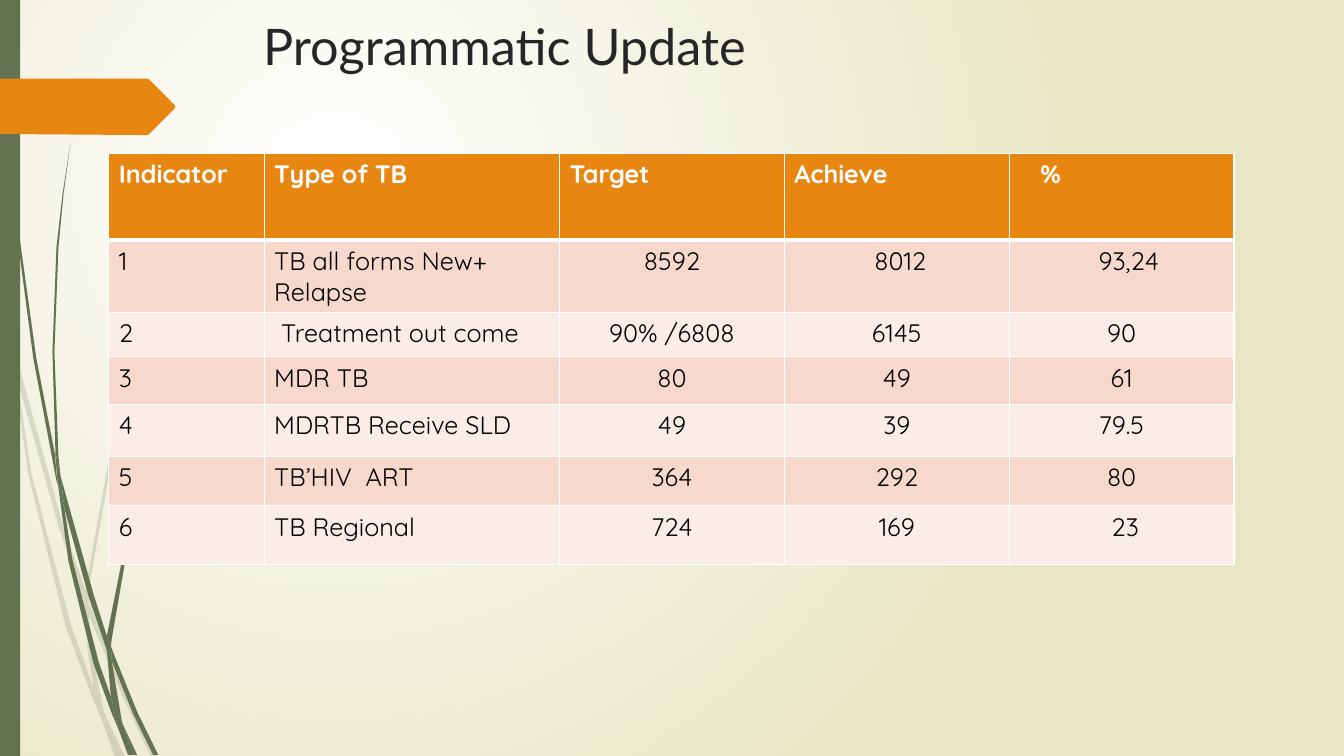
from dataclasses import dataclass

from lxml import etree
from pptx import Presentation
from pptx.dml.color import RGBColor
from pptx.enum.shapes import MSO_SHAPE
from pptx.enum.text import MSO_ANCHOR, PP_ALIGN
from pptx.oxml.ns import qn
from pptx.util import Inches, Pt

RECTANGLE = MSO_SHAPE.RECTANGLE
TOP = MSO_ANCHOR.TOP
LEFT, CENTER = PP_ALIGN.LEFT, PP_ALIGN.CENTER


@dataclass(frozen=True)
class Theme:
    white: str = "FFFFFF"
    black: str = "000000"
    title: str = "262626"
    sand: str = "E8E6C4"
    green: str = "647252"
    orange: str = "E78712"
    bands: tuple = ("F6D9CC", "FAEDE7")
    title_font: str = "Lato"
    body_font: str = "Quicksand"
    title_size: int = 36
    body_size: int = 18


THEME = Theme()

# Outlines of the grass blades, in inches on the slide
PALE_GRASS = [
    [(0.11, 3.5), (0.09, 3.22), (0, 2.82), (0, 2.99), (0.1, 3.44)],
    [(0.58, 5.22), (0.84, 5.99), (0.85, 5.86), (0.62, 5.2), (0.14, 3.45), (0.17, 3.76)],
    [(0.92, 6.07), (0.88, 5.96), (0.88, 6.1), (1.23, 6.94), (1.5, 7.51), (1.55, 7.51),
     (1.27, 6.92)],
    [(1.19, 7.51), (1.24, 7.51), (1.05, 7.11)],
    [(0.93, 6.83), (0.7, 6.19), (0.31, 4.69), (0.17, 3.76), (0.11, 3.5), (0.28, 4.7),
     (0.65, 6.21), (0.92, 6.93), (1.01, 7.14), (0.99, 7.07)],
    [(0.84, 5.99), (0.87, 6.46), (0.93, 6.83), (0.96, 6.92), (1.05, 7.11), (1.03, 7.06),
     (0.91, 6.46), (0.88, 6.1), (0.88, 6.08)],
    [(0.88, 5.84), (1.1, 4.62), (1.6, 3.49), (2.29, 2.45), (2.68, 1.98), (2.9, 1.75),
     (3.12, 1.54), (3.12, 1.53), (2.89, 1.75), (2.68, 1.97), (2.28, 2.44), (1.58, 3.48),
     (1.07, 4.61), (0.85, 5.84), (0.85, 5.86), (0.88, 5.96)],
    [(1.01, 7.14), (1.14, 7.51), (1.19, 7.51)],
    [(0.88, 6.08), (0.88, 6.1), (0.88, 5.96), (0.85, 5.86), (0.84, 5.99)],
    [(0.96, 6.92), (0.93, 6.83), (0.99, 7.07), (1.01, 7.14), (1.19, 7.51), (1.05, 7.11)],
]
DARK_GRASS = [
    [(0.07, 1.1), (0.17, 2.33), (0.33, 3.55), (0.56, 4.77), (0.57, 4.81), (0.55, 4.57),
     (0.55, 4.53), (0.36, 3.55), (0.19, 2.32), (0.08, 1.09), (0.05, 0.48), (0.04, 0),
     (0.03, 0), (0.04, 0.48)],
    [(0.88, 5.92), (1.06, 6.45), (1.06, 6.33), (1.06, 6.31), (0.93, 5.9), (0.6, 4.72),
     (0.64, 5.05)],
    [(1.13, 6.49), (1.1, 6.41), (1.11, 6.56), (1.32, 7.08), (1.52, 7.49), (1.57, 7.49),
     (1.36, 7.06)],
    [(1.1, 6.91), (0.98, 6.57), (0.72, 5.56), (0.64, 5.05), (0.57, 4.77), (0.68, 5.57),
     (0.93, 6.59), (1.11, 7.08), (1.17, 7.22), (1.16, 7.17)],
    [(0.6, 4.72), (0.58, 4.53), (0.54, 3.49), (0.58, 2.45), (0.63, 1.93), (0.7, 1.41),
     (0.62, 1.93), (0.56, 2.45), (0.52, 3.49), (0.55, 4.49)],
    [(1.33, 7.49), (1.36, 7.49), (1.22, 7.19)],
    [(0.57, 4.77), (0.64, 5.05), (0.6, 4.72), (0.55, 4.49), (0.55, 4.53)],
    [(1.11, 6.33), (1.25, 5.52), (1.58, 4.76), (2.05, 4.06), (2.31, 3.74), (2.45, 3.59),
     (2.61, 3.44), (2.6, 3.44), (2.45, 3.58), (2.31, 3.73), (2.04, 4.05), (1.56, 4.74),
     (1.22, 5.51), (1.06, 6.31), (1.1, 6.41)],
    [(1.17, 7.22), (1.27, 7.49), (1.31, 7.49)],
    [(1.06, 6.45), (1.1, 6.91), (1.16, 7.06), (1.22, 7.19), (1.21, 7.16), (1.11, 6.56),
     (1.09, 6.51)],
    [(1.06, 6.45), (1.09, 6.51), (1.11, 6.56), (1.1, 6.41), (1.06, 6.31), (1.06, 6.33)],
    [(1.16, 7.06), (1.1, 6.91), (1.16, 7.17), (1.17, 7.22), (1.3, 7.49), (1.33, 7.49),
     (1.22, 7.19)],
]
ARROW_TAG = [(1.74, 1.06), (1.73, 1.08), (1.48, 1.33), (1.46, 1.34), (1.36, 1.34),
             (0, 1.33), (0, 0.78), (1.46, 0.78), (1.48, 0.79), (1.73, 1.04)]

COLUMN_WIDTHS = [1.54, 2.93, 2.23, 2.23, 2.23]
ROW_HEIGHTS = [0.86, 0.72, 0.44, 0.47, 0.52, 0.49, 0.58]
ROWS = [
    ["Indicator", "Type of TB", "Target", "Achieve", "%"],
    ["1", "TB all forms New+ Relapse", "8592", "8012", "93,24"],
    ["2", "Treatment out come", "90% /6808", "6145", "90"],
    ["3", "MDR TB", "80", "49", "61"],
    ["4", "MDRTB Receive SLD", "49", "39", "79.5"],
    ["5", "TB’HIV  ART", "364", "292", "80"],
    ["6", "TB Regional", "724", "169", "23"],
]
CELL_MARGIN = 0.1
EXTRA_INDENTS = {(0, 4): 0.21, (1, 3): 0.07, (1, 4): 0.14, (2, 1): 0.07, (6, 4): 0.07}


def rgb(color):
    return RGBColor.from_string(color)


def set_background(slide):
    """Radial gradient from white to sand."""
    fill = slide.background.fill
    fill.gradient()
    for stop, color in zip(fill.gradient_stops, (THEME.white, THEME.sand)):
        stop.color.rgb = rgb(color)
    grad = next(slide.element.iter(qn("a:gradFill")))
    for lin in grad.findall(qn("a:lin")):
        grad.remove(lin)
    radial = etree.SubElement(grad, qn("a:path"), path="circle")
    etree.SubElement(radial, qn("a:fillToRect"),
                     l="50000", t="50000", r="100000", b="100000")


def paint(sp, color, opacity=100):
    sp.shadow.inherit = False
    sp.fill.solid()
    sp.fill.fore_color.rgb = rgb(color)
    sp.line.fill.background()
    if opacity < 100:
        srgb = next(sp.element.spPr.iter(qn("a:srgbClr")))
        etree.SubElement(srgb, qn("a:alpha"), val=str(opacity * 1000))


def add_outline(shapes, points, color, opacity=100):
    start, *rest = [(Inches(x), Inches(y)) for x, y in points]
    builder = shapes.build_freeform(*start)
    builder.add_line_segments(rest, close=True)
    paint(builder.convert_to_shape(), color, opacity)


def add_grass(slide, blades, opacity):
    group = slide.shapes.add_group_shape()
    for blade in blades:
        add_outline(group.shapes, blade, THEME.green, opacity)


def add_run(p, text, font, size, color, bold=False):
    r = p.add_run()
    r.text = text
    r.font.name, r.font.size, r.font.bold = font, Pt(size), bold
    r.font.color.rgb = rgb(color)


def add_title(slide, text):
    box = slide.shapes.add_textbox(Inches(0.92), Inches(0.1), Inches(11.5), Inches(1.45))
    tf = box.text_frame
    tf.word_wrap = True
    tf.vertical_anchor = TOP
    tf.margin_left = Inches(1.69)
    add_run(tf.paragraphs[0], text, THEME.title_font, THEME.title_size, THEME.title)


def set_borders(cell, **widths):
    """White lines; widths in points keyed by side: L, R, T, B."""
    tc_pr = cell._tc.get_or_add_tcPr()
    for side, width in widths.items():
        ln = etree.SubElement(tc_pr, qn(f"a:ln{side}"), w=str(Pt(width)))
        fill = etree.SubElement(ln, qn("a:solidFill"))
        etree.SubElement(fill, qn("a:srgbClr"), val=THEME.white)


def fill_cell(cell, row, col, text):
    header = row == 0
    set_borders(cell, L=1, R=1, T=3 if row == 1 else 1, B=3 if header else 1)
    cell.fill.solid()
    cell.fill.fore_color.rgb = rgb(THEME.orange if header else THEME.bands[(row - 1) % 2])
    cell.margin_left = Inches(CELL_MARGIN + EXTRA_INDENTS.get((row, col), 0))
    p = cell.text_frame.paragraphs[0]
    p.alignment = LEFT if header or col < 2 else CENTER
    add_run(p, text, THEME.body_font, THEME.body_size,
            THEME.white if header else THEME.black, bold=header)


def add_indicator_table(slide):
    frame = slide.shapes.add_table(len(ROWS), len(COLUMN_WIDTHS), Inches(1.08), Inches(1.52),
                                   Inches(sum(COLUMN_WIDTHS)), Inches(sum(ROW_HEIGHTS)))
    table = frame.table
    for column, width in zip(table.columns, COLUMN_WIDTHS):
        column.width = Inches(width)
    for table_row, height in zip(table.rows, ROW_HEIGHTS):
        table_row.height = Inches(height)
    for row, texts in enumerate(ROWS):
        for col, text in enumerate(texts):
            fill_cell(table.cell(row, col), row, col, text)


def main():
    prs = Presentation()
    prs.slide_width, prs.slide_height = Inches(13.33), Inches(7.5)
    slide = prs.slides.add_slide(prs.slide_layouts[6])
    set_background(slide)
    add_grass(slide, PALE_GRASS, opacity=20)
    add_grass(slide, DARK_GRASS, opacity=100)
    side_bar = slide.shapes.add_shape(RECTANGLE, 0, 0, Inches(0.2), prs.slide_height)
    paint(side_bar, THEME.green)
    add_outline(slide.shapes, ARROW_TAG, THEME.orange)
    add_title(slide, "Programmatic Update")
    add_indicator_table(slide)
    prs.save("out.pptx")


if __name__ == "__main__":
    main()
